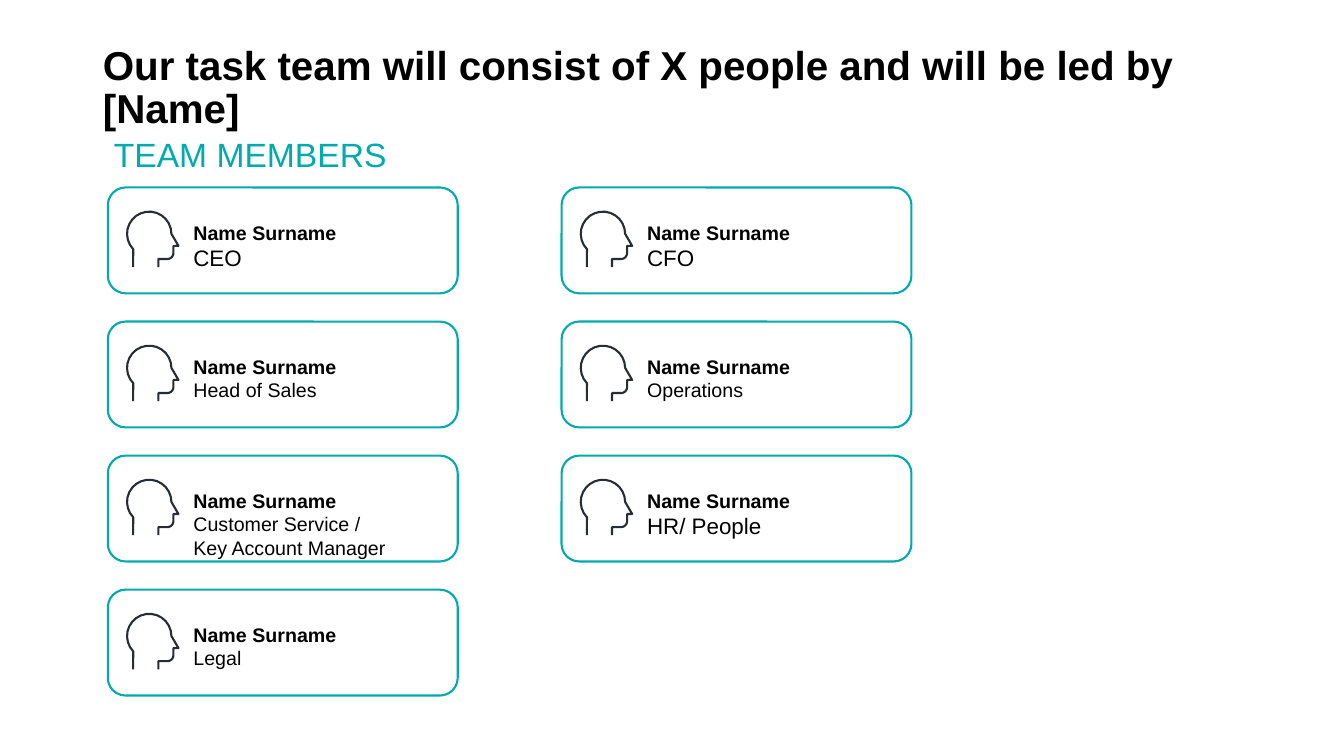
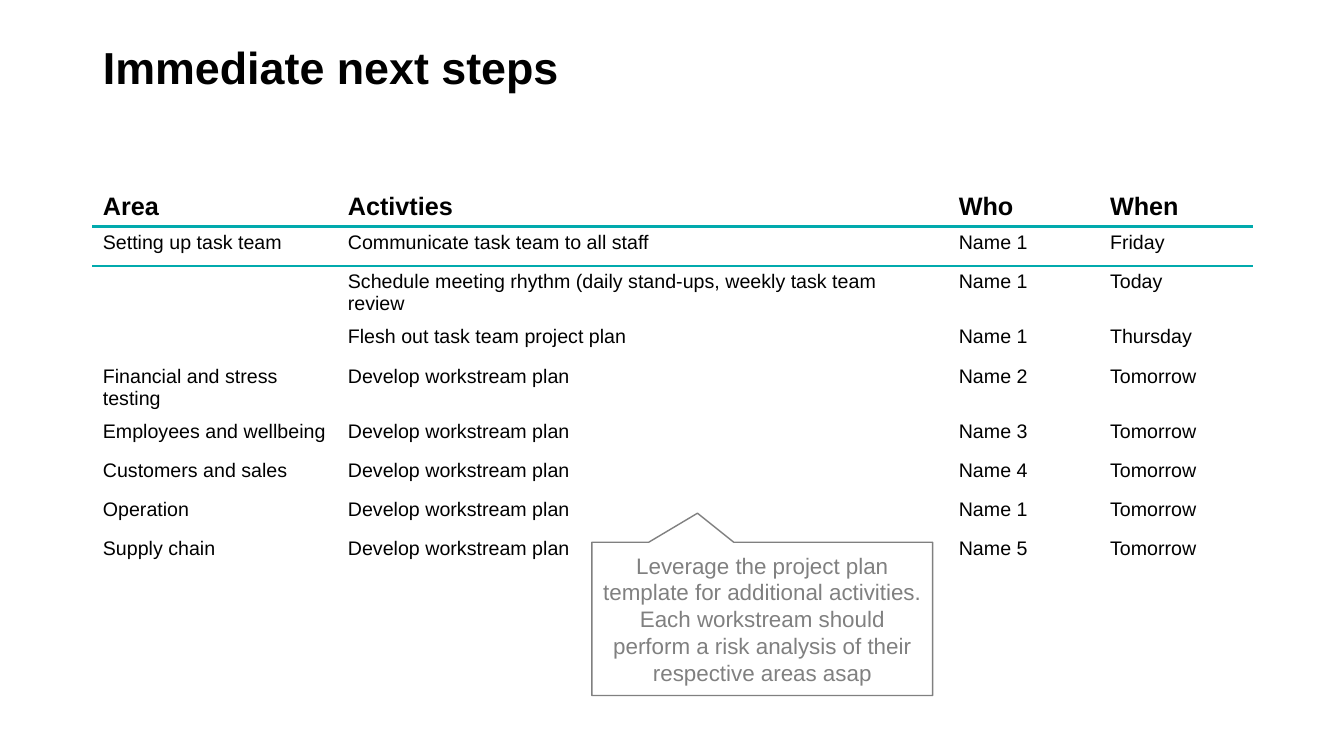
"""Build two slides: the task team members and the immediate next steps."""
from math import cos, radians, sin

from lxml.etree import SubElement
from pptx import Presentation
from pptx.dml.color import RGBColor
from pptx.enum.shapes import MSO_SHAPE as Shape
from pptx.enum.text import MSO_ANCHOR as Anchor, MSO_AUTO_SIZE as AutoSize, PP_ALIGN as Align
from pptx.oxml.ns import qn
from pptx.util import Inches, Pt

TEAL = RGBColor(0x01, 0xAA, 0xAD)
BLACK = RGBColor(0, 0, 0)
WHITE = RGBColor(0xFF, 0xFF, 0xFF)
GREY = RGBColor(0x80, 0x80, 0x80)
INK = RGBColor(0x28, 0x2D, 0x33)
FONT = "Arial"
LEFT, TOP, WIDTH = 0.92, 1.86, 11.5

TEAM_TITLE = "Our task team will consist of X people and will be led by [Name]"
TEAM_LABEL = "TEAM MEMBERS"
MEMBER_NAME = "Name Surname"
MEMBER_COLUMNS = [
    [("CEO", 16), ("Head of Sales", 14),
     ("Customer Service /\nKey Account Manager", 14), ("Legal", 14)],
    [("CFO", 16), ("Operations", 14), ("HR/ People", 16)],
]
CARD_LEFT, CARD_WIDTH, CARD_HEIGHT = 1.07, 3.47, 1.05
COLUMN_STEP, ROW_STEP = 4.5, 1.33

STEPS_TITLE = "Immediate next steps"
PLAN = "Develop workstream plan"
STEPS = [
    ("Area", "Activties", "Who", "When"),
    ("Setting up task team", "Communicate task team to all staff", "Name 1", "Friday"),
    ("", "Schedule meeting rhythm (daily stand-ups, weekly task team review", "Name 1", "Today"),
    ("", "Flesh out task team project plan", "Name 1", "Thursday"),
    ("Financial and stress testing", PLAN, "Name 2", "Tomorrow"),
    ("Employees and wellbeing", PLAN, "Name 3", "Tomorrow"),
    ("Customers and sales", PLAN, "Name 4", "Tomorrow"),
    ("Operation", PLAN, "Name 1", "Tomorrow"),
    ("Supply chain", PLAN, "Name 5", "Tomorrow"),
    ("", "", "", ""),
]
STEP_WIDTHS = [2.43, 6.06, 1.5, 1.51]
STEP_HEIGHT = 0.39
RULES = {1: 2.25, 2: 1.5}
ADVICE = [
    "Leverage the project plan template for additional activities.",
    "Each workstream should perform a risk analysis of their respective areas asap",
]


def inches(*values):
    return [Inches(value) for value in values]


def write(para, text, size, color=BLACK, bold=False):
    para.text = text
    for span in para.runs:
        span.font.name = FONT
        span.font.size = Pt(size)
        span.font.bold = bold
        span.font.color.rgb = color


def add_titled_slide(deck, text, size):
    slide = deck.slides.add_slide(deck.slide_layouts[5])
    title = slide.shapes.title
    title.left, title.top, title.width, title.height = inches(LEFT, 0.4, WIDTH, 0.99)
    frame = title.text_frame
    frame.auto_size = AutoSize.NONE
    frame.vertical_anchor = Anchor.TOP
    para = frame.paragraphs[0]
    write(para, text, size, bold=True)
    para.alignment = Align.LEFT
    para.line_spacing = 0.9
    return slide


def add_text_frame(shapes, *place):
    frame = shapes.add_textbox(*inches(*place)).text_frame
    frame.word_wrap = True
    return frame


def add_outlined(shapes, kind, place, color, weight):
    shape = shapes.add_shape(kind, *inches(*place))
    shape.shadow.inherit = False
    shape.fill.solid()
    shape.fill.fore_color.rgb = WHITE
    shape.line.color.rgb = color
    shape.line.width = Pt(weight)
    return shape


def arc(center_x, center_y, radius, start, stop, step):
    return [(center_x + radius * cos(radians(angle)), center_y + radius * sin(radians(angle)))
            for angle in range(start, stop + 1, step)]


def add_head(shapes, left, top):
    skull = arc(0.41, 0.46, 0.22, 136, 360, 14)
    nose = [(0.7, 0.58), (0.65, 0.58)]
    jaw = arc(0.59, 0.65, 0.06, 0, 90, 15)
    outline = [(0.25, 0.79), *skull, *nose, *jaw, (0.5, 0.71), (0.5, 0.79)]
    points = [inches(left + x, top + y) for x, y in outline]
    builder = shapes.build_freeform(*points[0])
    builder.add_line_segments(points[1:], close=False)
    head = builder.convert_to_shape()
    head.shadow.inherit = False
    head.fill.background()
    head.line.color.rgb = INK
    head.line.width = Pt(1.5)


def add_member(slide, left, top, role, size):
    shapes = slide.shapes.add_group_shape().shapes
    add_outlined(shapes, Shape.ROUNDED_RECTANGLE, (left, top, CARD_WIDTH, CARD_HEIGHT), TEAL, 1.5)
    add_head(shapes, left, top)
    frame = add_text_frame(shapes, left + 0.75, top + 0.28, 2.6, 0.56)
    write(frame.paragraphs[0], MEMBER_NAME, 14, bold=True)
    write(frame.add_paragraph(), role, size)


def set_borders(cell, row):
    properties = cell._tc.get_or_add_tcPr()
    edges = {"lnL": None, "lnR": None, "lnT": RULES.get(row), "lnB": RULES.get(row + 1)}
    for tag, weight in edges.items():
        line = SubElement(properties, qn(f"a:{tag}"), w=str(Pt(weight or 1)))
        fill = SubElement(line, qn("a:solidFill"))
        SubElement(fill, qn("a:srgbClr"), val=str(TEAL if weight else WHITE))


def add_steps_table(slide):
    place = inches(LEFT, TOP, WIDTH, STEP_HEIGHT * len(STEPS))
    table = slide.shapes.add_table(len(STEPS), len(STEP_WIDTHS), *place).table
    table.first_row = table.horz_banding = False
    for column, width in zip(table.columns, STEP_WIDTHS):
        column.width = Inches(width)
    for row, texts in enumerate(STEPS):
        table.rows[row].height = Inches(STEP_HEIGHT)
        for column, text in enumerate(texts):
            cell = table.cell(row, column)
            set_borders(cell, row)
            cell.fill.background()
            write(cell.text_frame.paragraphs[0], text, 14 if row else 18, bold=row == 0)


def build_team(deck):
    slide = add_titled_slide(deck, TEAM_TITLE, 28.8)
    frame = add_text_frame(slide.shapes, CARD_LEFT, 1.31, 3.52, 0.48)
    frame.margin_left = frame.margin_right = frame.margin_top = frame.margin_bottom = Inches(0.06)
    write(frame.paragraphs[0], TEAM_LABEL, 24, TEAL)
    frame.paragraphs[0].line_spacing = 0.9
    for column, members in enumerate(MEMBER_COLUMNS):
        for row, (role, size) in enumerate(members):
            add_member(slide, CARD_LEFT + column * COLUMN_STEP, TOP + row * ROW_STEP, role, size)


def build_steps(deck):
    slide = add_titled_slide(deck, STEPS_TITLE, 32)
    add_steps_table(slide)
    callout = add_outlined(slide.shapes, Shape.RECTANGULAR_CALLOUT, (5.87, 5.38, 3.38, 1.52), GREY, 1)
    callout.adjustments[0], callout.adjustments[1] = -0.19, -0.69
    frame = callout.text_frame
    frame.word_wrap = True
    frame.vertical_anchor = Anchor.MIDDLE
    frame.text = "\n".join(ADVICE)
    for para, text in zip(frame.paragraphs, ADVICE):
        write(para, text, 16, GREY)
        para.alignment = Align.CENTER


def main():
    deck = Presentation()
    deck.slide_width, deck.slide_height = inches(13.33, 7.5)
    build_team(deck)
    build_steps(deck)
    deck.save("out.pptx")


if __name__ == "__main__":
    main()
